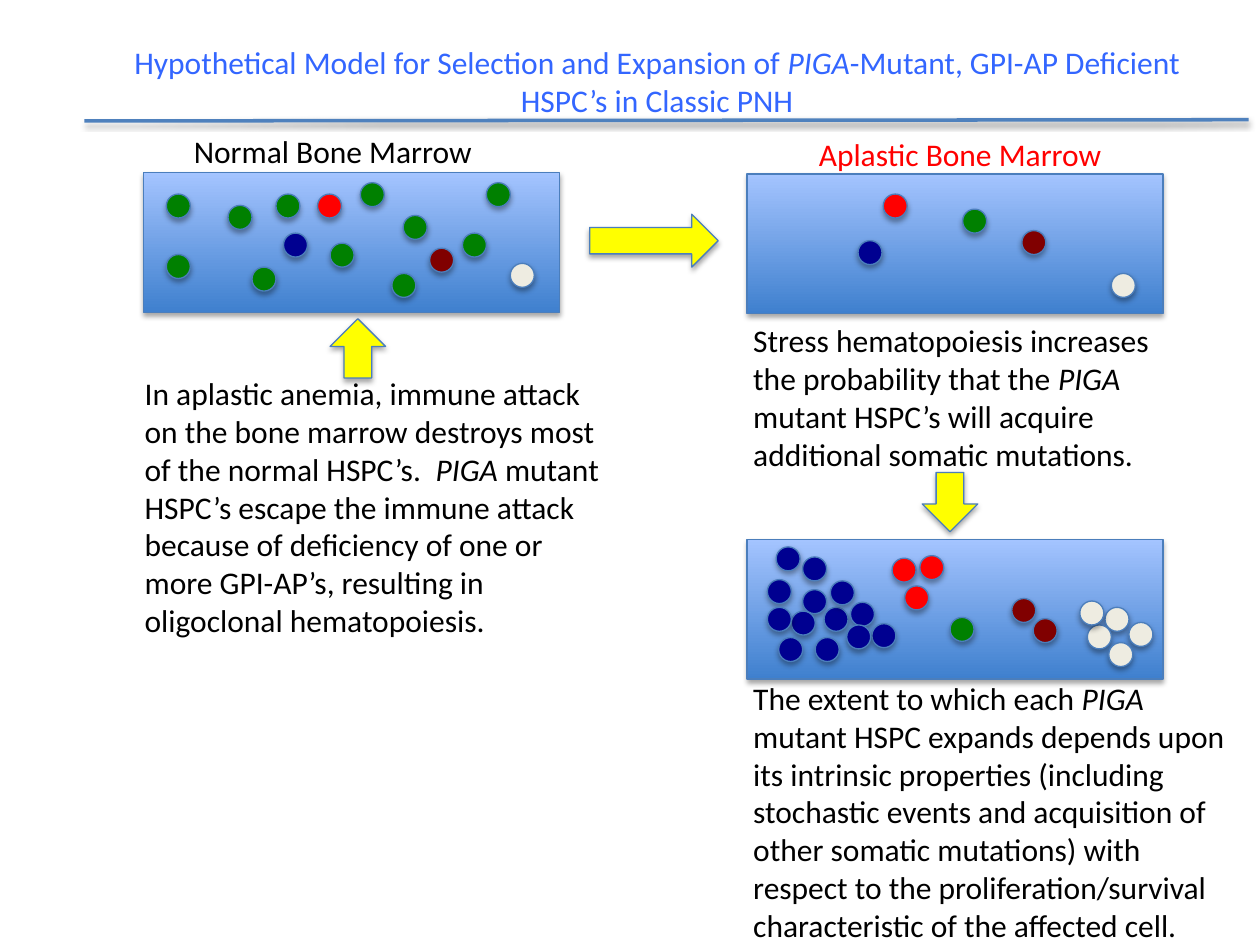
import pptx
import pptx.util
import pptx.dml.color
import pptx.enum.shapes
import pptx.enum.text
import pptx.oxml
import pptx.oxml.ns

Inches = pptx.util.Inches
Pt = pptx.util.Pt
RGB = pptx.dml.color.RGBColor.from_string
KIND = pptx.enum.shapes.MSO_SHAPE

HUES = {
    "edge": "4B7EBC", "rule": "4F81BD", "deep": "3F80CE", "pale": "A4C4FF",
    "green": "008000", "maroon": "800000", "cream": "EEECE1", "red": "FF0000",
    "navy": "000090", "yellow": "FFFF00", "title": "3366FF", "black": "000000",
}

deck = pptx.Presentation()
deck.slide_width, deck.slide_height = Inches(10), Inches(7.5)
slide = deck.slides.add_slide(deck.slide_layouts[6])
shapes = slide.shapes


def shade(item, alpha):
    """Give a shape or connector a soft shadow below it."""
    item._element.spPr.append(pptx.oxml.parse_xml(
        f'<a:effectLst {pptx.oxml.ns.nsdecls("a")}>'
        f'<a:outerShdw blurRad="{Pt(3.1)}" dist="{Pt(1.8)}" dir="5400000" rotWithShape="0">'
        f'<a:srgbClr val="000000"><a:alpha val="{alpha}000"/></a:srgbClr>'
        '</a:outerShdw></a:effectLst>'))


def draw(kind, box, hue=None):
    """Add an outlined shape; without a hue it gets the marrow gradient."""
    item = shapes.add_shape(kind, *map(Inches, box))
    if hue:
        item.fill.solid()
        item.fill.fore_color.rgb = RGB(HUES[hue])
    else:
        item.fill.gradient()
        item.fill.gradient_angle = 90
        for stop, tone in zip(item.fill.gradient_stops, ("deep", "pale")):
            stop.color.rgb = RGB(HUES[tone])
    item.line.color.rgb = RGB(HUES["edge"])
    item.line.width = Pt(0.75)
    shade(item, 35)


# Marrow panels: corner, then cells by colour
panels = [
    (1.14, 1.37, {
        "green": [(1.32, 1.54), (1.32, 2.02), (1.81, 1.63), (2, 2.12),
                  (2.19, 1.54), (2.62, 1.93), (2.86, 1.45), (3.67, 1.85),
                  (3.11, 2.17), (3.86, 1.45), (3.2, 1.71)],
        "maroon": [(3.41, 1.97)],
        "cream": [(4.05, 2.09)],
        "red": [(2.52, 1.54)],
        "navy": [(2.25, 1.85)],
    }),
    (5.93, 1.38, {
        "cream": [(8.82, 2.17)],
        "maroon": [(8.11, 1.83)],
        "navy": [(6.81, 1.91)],
        "red": [(7.01, 1.54)],
        "green": [(7.64, 1.66)],
    }),
    (5.93, 4.28, {
        "navy": [(6.37, 4.68), (6.28, 4.85), (6.54, 4.82), (6.59, 4.61),
                 (6.75, 4.78), (6.92, 4.95), (6.72, 4.96), (6.47, 5.06),
                 (6.18, 5.06), (6.37, 4.42), (6.09, 4.6), (6.09, 4.82),
                 (6.16, 4.34)],
        "green": [(7.54, 4.9)],
        "red": [(7.08, 4.43), (7.3, 4.41), (7.18, 4.65)],
        "cream": [(8.77, 4.82), (8.63, 4.96), (8.96, 4.94), (8.8, 5.1),
                  (8.57, 4.77)],
        "maroon": [(8.03, 4.75), (8.2, 4.91)],
    }),
]
for left, top, cells in panels:
    draw(KIND.RECTANGLE, (left, top, 3.3, 1.11))
    for hue, spots in cells.items():
        for x, y in spots:
            draw(KIND.OVAL, (x, y, 0.19, 0.19), hue)

# Arrows between the stages
draw(KIND.UP_ARROW, (2.62, 2.53, 0.44, 0.47), "yellow")
draw(KIND.RIGHT_ARROW, (4.68, 1.7, 1.02, 0.42), "yellow")
draw(KIND.DOWN_ARROW, (7.32, 3.75, 0.44, 0.47), "yellow")

# Rule under the title
rule = shapes.add_connector(pptx.enum.shapes.MSO_CONNECTOR.STRAIGHT,
                            Inches(0.67), Inches(0.96), Inches(9.91), Inches(0.95))
rule.line.color.rgb = RGB(HUES["rule"])
rule.line.width = Pt(2)
shade(rule, 38)

# Title, headings and notes; the gene name is set in italics
gene = "PIGA"
texts = [
    ((0.82, 0.29, 8.79, 0.71), "title",
     "Hypothetical Model for Selection and Expansion of PIGA-Mutant, "
     "GPI-AP Deficient HSPC’s in Classic PNH"),
    ((1.44, 1, 2.54, 0.4), "black", "Normal Bone Marrow"),
    ((6.4, 1.02, 2.61, 0.4), "red", "Aplastic Bone Marrow"),
    ((1.05, 2.92, 3.86, 2.22), "black",
     "In aplastic anemia, immune attack on the bone marrow destroys most of "
     "the normal HSPC’s.  PIGA mutant HSPC’s escape the immune attack because "
     "of deficiency of one or more GPI-AP’s, resulting in oligoclonal "
     "hematopoiesis."),
    ((5.88, 2.5, 3.56, 1.31), "black",
     "Stress hematopoiesis increases the probability that the PIGA mutant "
     "HSPC’s will acquire additional somatic mutations."),
    ((5.88, 5.34, 4.03, 2.22), "black",
     "The extent to which each PIGA mutant HSPC expands depends upon its "
     "intrinsic properties (including stochastic events and acquisition of "
     "other somatic mutations) with respect to the proliferation/survival "
     "characteristic of the affected cell."),
]
for box, hue, words in texts:
    frame = shapes.add_textbox(*map(Inches, box)).text_frame
    frame.word_wrap = True
    para = frame.paragraphs[0]
    para.font.name = "Calibri"
    para.font.size = Pt(18)
    para.font.color.rgb = RGB(HUES[hue])
    if hue == "title":
        para.alignment = pptx.enum.text.PP_ALIGN.CENTER
    before, found, after = words.partition(gene)
    para.add_run().text = before
    if found:
        name = para.add_run()
        name.text = found
        name.font.italic = True
        para.add_run().text = after

deck.save("out.pptx")
